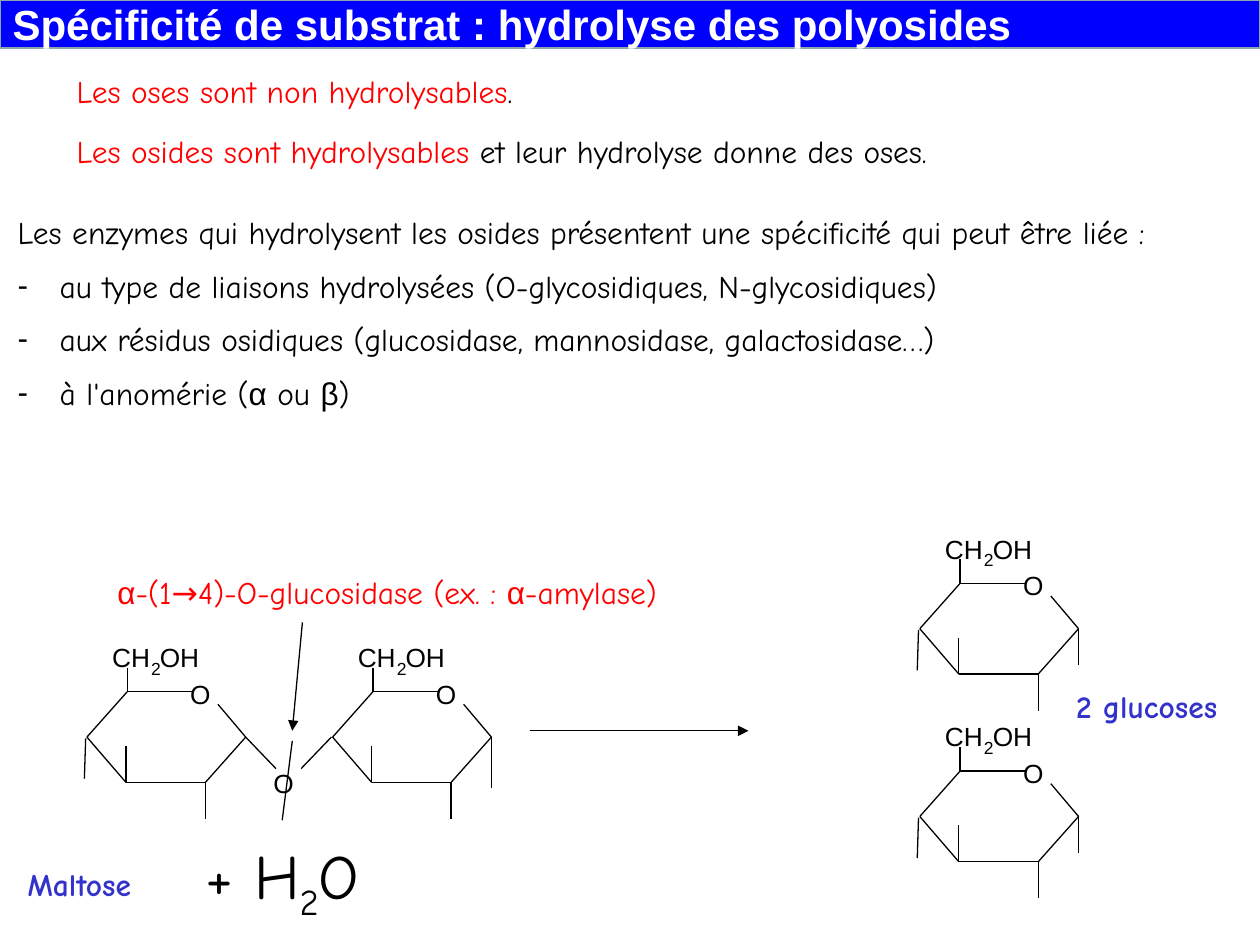
from lxml.etree import SubElement
from pptx import Presentation
from pptx.dml.color import RGBColor
from pptx.enum.shapes import MSO_CONNECTOR as Conn
from pptx.enum.text import MSO_ANCHOR as Anchor, MSO_AUTO_SIZE as Auto, PP_ALIGN as Align
from pptx.oxml.ns import qn
from pptx.util import Inches, Pt

COLS, ROWS = 10, 7.5
BLACK, WHITE, RED, INDIGO = "000000", "FFFFFF", "FF0000", "3333CC"
GREEK = {"name": "Arial"}


def rgb(value):
    return RGBColor.from_string(value)


class Deck:
    """Holds the style and the current slide; lengths are grid columns and rows."""

    body = {"name": "Comic Neue", "size": Pt(18)}
    atom = {"name": "Arial", "size": Pt(15)}
    heading = {"name": "Arial", "size": Pt(24), "bold": True}

    def __init__(self):
        self.prs = Presentation()
        self.prs.slide_width, self.prs.slide_height = Inches(10), Inches(7.5)
        self.s = self.prs.slides.add_slide(self.prs.slide_layouts[1])
        self.shapes = self.s.shapes

    def x(self, col):
        return round(self.prs.slide_width * col / COLS)

    def y(self, row):
        return round(self.prs.slide_height * row / ROWS)

    def place(self, sp, left, top, width, height):
        sp.left, sp.top = self.x(left), self.y(top)
        sp.width, sp.height = self.x(width), self.y(height)

    def run(self, p, text, style, color=BLACK, baseline=0):
        r = p.add_run()
        r.text = text
        for key, value in style.items():
            setattr(r.font, key, value)
        r.font.color.rgb = rgb(color)
        if baseline:
            r.font._element.set("baseline", str(baseline * 1000))

    def paragraph(self, p, parts, style, color=BLACK, bullet=None):
        """Parts are strings or (text, style changes, colour, baseline) tuples."""
        pPr = p._p.get_or_add_pPr()
        SubElement(SubElement(pPr, qn("a:spcBef")), qn("a:spcPct")).set("val", "50000")
        indent = Inches(0.25) if bullet else 0
        pPr.set("marL", str(indent))
        pPr.set("indent", str(-indent))
        if bullet:
            SubElement(pPr, qn("a:buFont")).set("typeface", "Arial")
            SubElement(pPr, qn("a:buChar")).set("char", bullet)
        else:
            SubElement(pPr, qn("a:buNone"))
        for part in parts:
            text, extra, tint, base = part if isinstance(part, tuple) else (part, {}, color, 0)
            self.run(p, text, {**style, **extra}, tint or color, base)

    def title(self, text, *box):
        sp = self.s.shapes.title
        self.place(sp, *box)
        sp.fill.solid()
        sp.fill.fore_color.rgb = rgb("0000FF")
        sp.line.color.rgb = rgb("8AA6A8")
        sp.line.width = Pt(1)
        tf = sp.text_frame
        tf.auto_size, tf.vertical_anchor = Auto.NONE, Anchor.MIDDLE
        p = tf.paragraphs[0]
        p.alignment = Align.LEFT
        self.run(p, text, self.heading, WHITE)

    def listing(self, intro, items, *box):
        sp = self.s.placeholders[1]
        self.place(sp, *box)
        tf = sp.text_frame
        tf.auto_size = Auto.NONE
        self.paragraph(tf.paragraphs[0], [intro], self.body)
        for parts in items:
            self.paragraph(tf.add_paragraph(), parts, self.body, bullet="-")

    def text(self, parts, box, color=BLACK, align=Align.LEFT, **extra):
        sp = self.shapes.add_textbox(0, 0, 0, 0)
        self.place(sp, *box)
        sp.text_frame.word_wrap = True
        p = sp.text_frame.paragraphs[0]
        self.paragraph(p, parts, {**self.body, **extra}, color)
        p.alignment = align

    def symbol(self, text, left, top, **extra):
        sp = self.shapes.add_textbox(0, 0, 0, 0)
        self.place(sp, left, top, 0.16, 0.25)
        tf = sp.text_frame
        tf.word_wrap = False
        for side in ("left", "right", "top", "bottom"):
            setattr(tf, f"margin_{side}", 0)
        self.run(tf.paragraphs[0], text, {**self.atom, **extra})

    def line(self, start, end, arrow=False):
        (x1, y1), (x2, y2) = start, end
        sp = self.shapes.add_connector(Conn.STRAIGHT, self.x(x1), self.y(y1), self.x(x2), self.y(y2))
        sp.line.color.rgb = rgb(BLACK)
        sp.line.width = Pt(0.75)
        if arrow:
            SubElement(sp.line._get_or_add_ln(), qn("a:tailEnd")).set("type", "triangle")
        SubElement(sp._element.spPr, qn("a:effectLst"))

    def glucose(self, col, row, left_stub=0.32, right_stub=0.29):
        """Sugar ring grouped around its upper left corner."""
        self.shapes = self.s.shapes.add_group_shape().shapes
        top, left, low_left = (0, 0), (-0.32, 0.36), (-0.01, 0.72)
        low_right, right = (0.62, 0.72), (0.94, 0.36)
        bonds = [(top, left), (left, low_left), (low_left, low_right), (low_right, right),
                 (right, (0.72, 0.1)), (top, (0.53, 0)), (top, (0, -0.19)),
                 (low_right, (0.62, 1.01)), (low_left, (-0.01, 0.43))]
        if left_stub:
            bonds.append(((-0.33, 0.37), (-0.34, 0.37 + left_stub)))
        if right_stub:
            bonds.append((right, (0.94, 0.36 + right_stub)))
        for bond in bonds:
            self.line(*[(col + dx, row + dy) for dx, dy in bond])
        for text, dx in (("C", -0.12), ("H", 0.03), ("O", 0.26), ("H", 0.42)):
            self.symbol(text, col + dx, row - 0.4)
        self.symbol("2", col + 0.19, row - 0.27, size=Pt(10))
        self.symbol("O", col + 0.5, row - 0.11)
        self.shapes = self.s.shapes


def main():
    deck = Deck()

    # Title and specificity list
    deck.title("Spécificité de substrat : hydrolyse des polyosides", 0, 0, 10, 0.38)
    deck.listing(
        "Les enzymes qui hydrolysent les osides présentent une spécificité qui peut être liée :",
        [[" au type de liaisons hydrolysées (O-glycosidiques, N-glycosidiques)"],
         [" aux résidus osidiques (glucosidase, mannosidase, galactosidase…)"],
         [" à l'anomérie (", ("α", GREEK, BLACK, 0), " ou ", ("β", GREEK, BLACK, 0), ")"]],
        0.04, 1.64, 9.73, 2.27)

    # Opening statements
    deck.text(["Les oses sont non hydrolysables", (".", {}, BLACK, 0)], (0.51, 0.52, 6.69, 0.43), RED)
    deck.text(["Les osides sont hydrolysables", (" et leur hydrolyse donne des oses.", {}, BLACK, 0)],
              (0.51, 1, 9.21, 0.43), RED)

    # Maltose: two rings and the bridging oxygen
    deck.glucose(1.01, 5.49, right_stub=0)
    deck.glucose(2.96, 5.49, left_stub=0, right_stub=0.4)
    deck.symbol("O", 2.17, 6.09)
    deck.line((2.63, 5.85), (2.39, 6.1))
    deck.line((2.19, 6.1), (1.95, 5.85))

    # Enzyme, cut and reaction arrow
    alpha = ("α", GREEK, RED, 0)
    deck.text([" ", alpha, "-(1→4)-O-glucosidase (ex. : ", alpha, "-amylase)"],
              (0.75, 4.5, 5.67, 0.43), RED)
    deck.line((2.4, 4.94), (2.32, 5.8), arrow=True)
    deck.line((2.32, 5.88), (2.24, 6.51))
    deck.line((4.21, 5.8), (5.94, 5.8), arrow=True)

    # Products
    for row in (4.63, 6.12):
        deck.glucose(7.62, row)

    # Captions
    deck.text(["+ H", ("2", {}, BLACK, -25), "O"], (1.53, 6.59, 1.89, 0.7), size=Pt(36))
    deck.text(["Maltose"], (0.12, 6.82, 1.42, 0.43), INDIGO, bold=True)
    deck.text(["2 glucoses"], (8.39, 5.4, 1.42, 0.77), INDIGO, Align.CENTER, bold=True)

    deck.prs.save("out.pptx")


if __name__ == "__main__":
    main()
